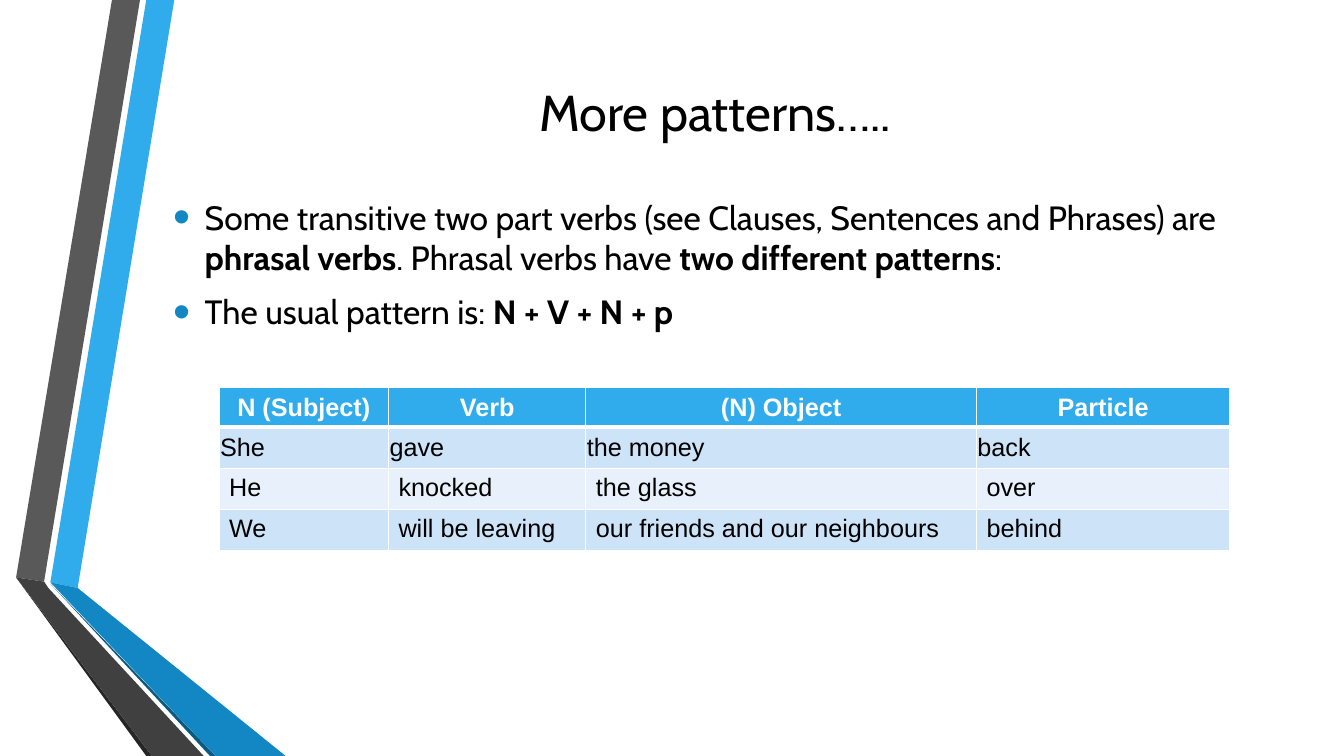
from lxml import etree
from pptx import Presentation
from pptx.dml.color import RGBColor
from pptx.enum import text as t
from pptx.oxml import ns
from pptx.util import Pt

BLACK, WHITE, BLUE, DEEP_BLUE = "000000", "FFFFFF", "30ACEC", "1287C3"
BANDS = ["CDE3F8", "E8F1FB"]

RIBBONS = [
    (BLUE, [(36, 416), (55.5, 420), (124.5, 0), (104.5, 0)]),
    ("595959", [(100, 0), (80, 0), (11.5, 412.5), (31.5, 415.5)]),
    ("262626", [(11.5, 412.5), (104.5, 540), (108.5, 540)]),
    ("0C5A82", [(36, 417), (150, 540), (154, 540)]),
    (DEEP_BLUE, [(36, 416), (154, 540), (204, 540), (55.5, 420)]),
    ("404040", [(145.5, 540), (34.5, 420), (31.5, 415.5), (11.5, 412.5), (108.5, 540)]),
]

BULLETS = [
    [("Some transitive two part verbs (see Clauses, Sentences and Phrases) are ", False),
     ("phrasal verbs", True),
     (". Phrasal verbs have ", False),
     ("two different patterns", True),
     (":", False)],
    [("The usual pattern is: ", False), ("N + V + N + p", True)],
]

COLUMN_WIDTHS = [121, 141, 279, 181]
ROW_HEIGHTS = [28, 29.5, 29.5, 29.5]
PATTERN_ROWS = [
    ["N (Subject)", "Verb", "(N) Object", "Particle"],
    ["She", "gave", "the money", "back"],
    ["He", "knocked", "the glass", "over"],
    ["We", "will be leaving", "our friends and our neighbours", "behind"],
]


def rgb(value):
    """Turn a hex string into a colour."""
    return RGBColor.from_string(value)


def add_text(paragraph, content, size=18, font="Arial", color=BLACK, bold=False):
    """Append a formatted run to a paragraph."""
    run = paragraph.add_run()
    run.text = content
    run.font.size = Pt(size)
    run.font.name = font
    run.font.bold = bold
    run.font.color.rgb = rgb(color)


def add_ribbon(slide, color, corners):
    """Draw one filled polygon of the side decoration."""
    points = [(Pt(x), Pt(y)) for x, y in corners]
    builder = slide.shapes.build_freeform(*points[0])
    builder.add_line_segments(points[1:], close=True)
    shape = builder.convert_to_shape()
    shape.shadow.inherit = False
    shape.fill.solid()
    shape.fill.fore_color.rgb = rgb(color)
    shape.line.fill.background()


def place(shape, left, top, width, height):
    """Move and size a shape, in points."""
    shape.left, shape.top = Pt(left), Pt(top)
    shape.width, shape.height = Pt(width), Pt(height)


def fill_title(title):
    """Place and write the title."""
    place(title, 116.5, 54, 789, 50.5)
    frame = title.text_frame
    frame.auto_size = t.MSO_AUTO_SIZE.NONE
    frame.vertical_anchor = t.MSO_ANCHOR.MIDDLE
    paragraph = frame.paragraphs[0]
    paragraph.alignment = t.PP_ALIGN.CENTER
    add_text(paragraph, "More patterns…..", size=36, font="Cabin")


def set_bullet(paragraph):
    """Give a paragraph a large blue bullet and a hanging indent."""
    properties = paragraph._p.get_or_add_pPr()
    properties.set("marL", str(Pt(22.5)))
    properties.set("indent", str(Pt(-22.5)))
    color = etree.SubElement(properties, ns.qn("a:buClr"))
    etree.SubElement(color, ns.qn("a:srgbClr"), val=DEEP_BLUE)
    etree.SubElement(properties, ns.qn("a:buSzPct"), val="145000")
    etree.SubElement(properties, ns.qn("a:buFont"), typeface="Arial")
    etree.SubElement(properties, ns.qn("a:buChar"), char="•")


def fill_body(body):
    """Place and write the bulleted list."""
    place(body, 116.5, 104.5, 789, 402)
    frame = body.text_frame
    frame.auto_size = t.MSO_AUTO_SIZE.NONE
    frame.vertical_anchor = t.MSO_ANCHOR.TOP
    frame.margin_top = Pt(36)
    for index, runs in enumerate(BULLETS):
        paragraph = frame.add_paragraph() if index else frame.paragraphs[0]
        paragraph.space_before = Pt(0)
        paragraph.space_after = Pt(10)
        set_bullet(paragraph)
        for content, bold in runs:
            add_text(paragraph, content, size=24, font="Cabin", bold=bold)


def set_borders(cell, top, bottom):
    """Draw white cell borders with the given top and bottom widths."""
    properties = cell._tc.get_or_add_tcPr()
    for side, width in (("L", 1), ("R", 1), ("T", top), ("B", bottom)):
        line = etree.SubElement(properties, ns.qn("a:ln" + side), w=str(Pt(width)))
        fill = etree.SubElement(line, ns.qn("a:solidFill"))
        etree.SubElement(fill, ns.qn("a:srgbClr"), val=WHITE)


def fill_cell(cell, content, row):
    """Format and write one table cell."""
    header = row == 0
    set_borders(cell, top=3 if row == 1 else 1, bottom=3 if header else 1)
    cell.fill.solid()
    cell.fill.fore_color.rgb = rgb(BLUE if header else BANDS[(row - 1) % 2])
    if row < 2:
        cell.vertical_anchor = t.MSO_ANCHOR.MIDDLE
        cell.margin_left = cell.margin_right = Pt(0.75)
        cell.margin_top = cell.margin_bottom = Pt(0.75)
    paragraph = cell.text_frame.paragraphs[0]
    paragraph.alignment = t.PP_ALIGN.CENTER if header else t.PP_ALIGN.LEFT
    add_text(paragraph, content, color=WHITE if header else BLACK, bold=header)


def add_pattern_table(slide):
    """Add the table of example sentences."""
    table = slide.shapes.add_table(
        len(ROW_HEIGHTS), len(COLUMN_WIDTHS), Pt(156.5), Pt(277),
        Pt(sum(COLUMN_WIDTHS)), Pt(sum(ROW_HEIGHTS))).table
    for column, width in zip(table.columns, COLUMN_WIDTHS):
        column.width = Pt(width)
    for row, height in zip(table.rows, ROW_HEIGHTS):
        row.height = Pt(height)
    for row, contents in enumerate(PATTERN_ROWS):
        for column, content in enumerate(contents):
            fill_cell(table.cell(row, column), content, row)


def main():
    """Build and save the slide."""
    presentation = Presentation()
    presentation.slide_width, presentation.slide_height = Pt(960), Pt(540)
    slide = presentation.slides.add_slide(presentation.slide_layouts[1])
    for color, corners in RIBBONS:
        add_ribbon(slide, color, corners)
    fill_title(slide.shapes.title)
    fill_body(slide.placeholders[1])
    add_pattern_table(slide)
    presentation.save("out.pptx")


if __name__ == "__main__":
    main()
